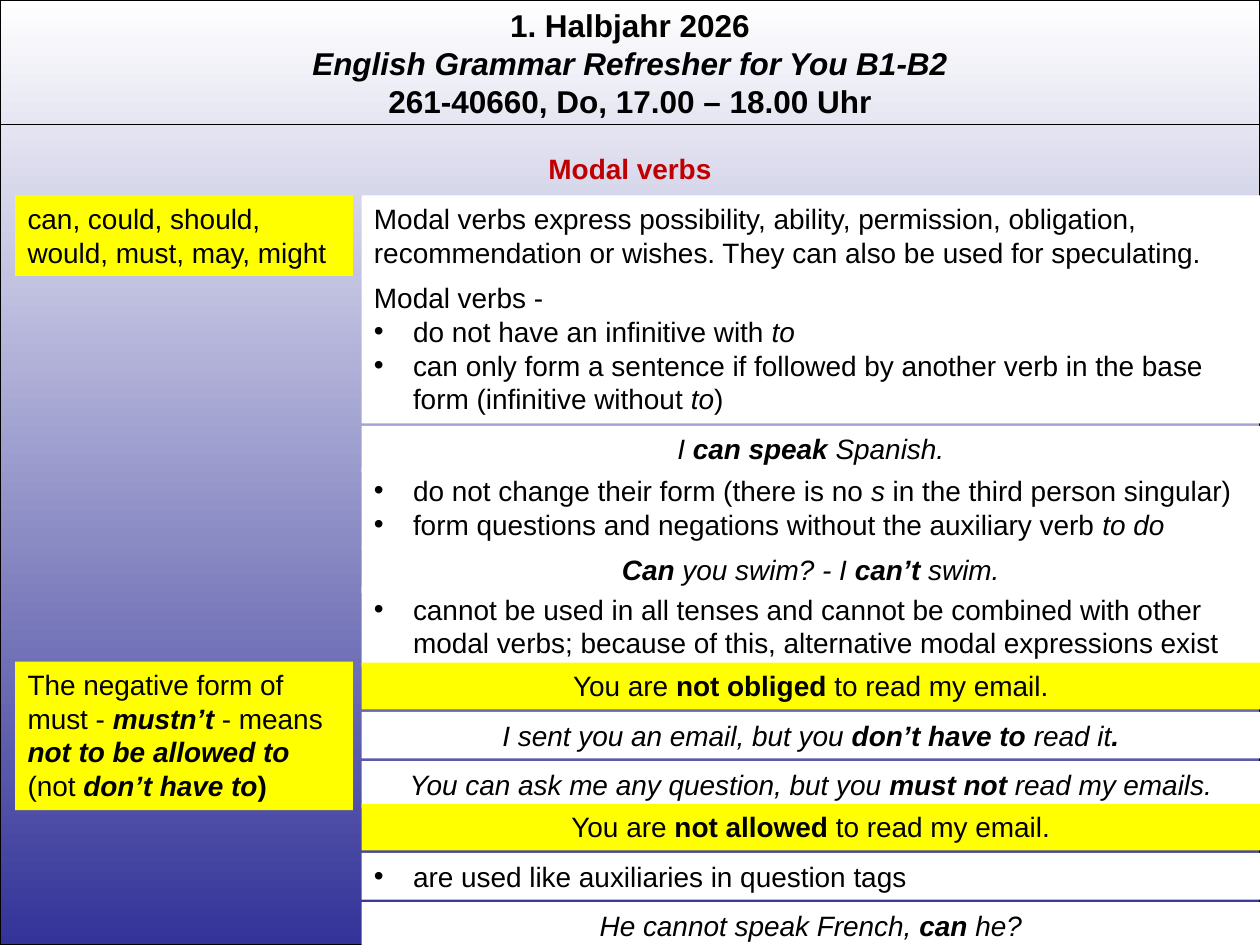
from dataclasses import dataclass

from lxml import etree
from pptx import Presentation
from pptx.dml.color import RGBColor
from pptx.enum.shapes import MSO_CONNECTOR, MSO_SHAPE
from pptx.enum.text import MSO_ANCHOR, MSO_AUTO_SIZE, PP_ALIGN
from pptx.oxml.ns import qn
from pptx.util import Inches, Pt

RECTANGLE = MSO_SHAPE.RECTANGLE
STRAIGHT = MSO_CONNECTOR.STRAIGHT
LEFT, CENTER = PP_ALIGN.LEFT, PP_ALIGN.CENTER
TOP = MSO_ANCHOR.TOP
GROW = MSO_AUTO_SIZE.SHAPE_TO_FIT_TEXT


@dataclass(frozen=True)
class Theme:
    font: str = "Arial"
    black: RGBColor = RGBColor(0, 0, 0)
    white: RGBColor = RGBColor(255, 255, 255)
    yellow: RGBColor = RGBColor(255, 255, 0)
    red: RGBColor = RGBColor(0xC0, 0, 0)
    blue: RGBColor = RGBColor(0x33, 0x33, 0x99)
    header_size: int = 18
    body_size: int = 16
    line_width: float = 0.75


THEME = Theme()

# Layout in inches
PAGE_WIDTH, PAGE_HEIGHT = 10, 7.5
HEADER_HEIGHT, RULE_TOP, TITLE_TOP = 1.01, 0.99, 1.15
LINE_HEIGHT, PADDING = 0.27, 0.1
INDENT = 0.31
SIDE = (0.12, 2.68)
MAIN = (2.87, PAGE_WIDTH - 2.87)

# Content: a paragraph is (kind, spans); a span is (text, style), b bold, i italic
HEADER = [
    ("center", [("1. Halbjahr 2026", "b")]),
    ("center", [("English Grammar Refresher for You B1-B2", "bi")]),
    ("center", [("261-40660, Do, 17.00 – 18.00 Uhr", "b")]),
]
TITLE = [("center", [("Modal verbs", "b")])]

# Blocks: column, top, number of lines, fill, paragraphs
BLOCKS = [
    (SIDE, 1.55, 2, THEME.yellow, [
        ("plain", [("can, could, should, would, must, may, might", "")])]),
    (MAIN, 1.55, 2, THEME.white, [
        ("plain", [("Modal verbs express possibility, ability, permission, obligation, "
                    "recommendation or wishes. They can also be used for speculating.", "")])]),
    (MAIN, 2.18, 4, THEME.white, [
        ("plain", [("Modal verbs -", "")]),
        ("bullet", [("do not have an infinitive with ", ""), ("to", "i")]),
        ("bullet", [("can only form a sentence if followed by another verb in the base "
                     "form (infinitive without ", ""), ("to", "i"), (")", "")])]),
    (MAIN, 3.71, 2, THEME.white, [
        ("bullet", [("do not change their form (there is no ", ""), ("s", "i"),
                    (" in the third person singular)", "")]),
        ("bullet", [("form questions and negations without the auxiliary verb ", ""),
                    ("to do", "i")])]),
    (MAIN, 3.38, 1, THEME.white, [
        ("center", [("I ", "i"), ("can speak ", "bi"), ("Spanish.", "i")])]),
    (MAIN, 4.34, 1, THEME.white, [
        ("center", [("Can ", "bi"), ("you swim? - I ", "i"), ("can’t", "bi"),
                    (" swim.", "i")])]),
    (MAIN, 4.65, 2, THEME.white, [
        ("bullet", [("cannot be used in all tenses and cannot be combined with other modal "
                     "verbs; because of this, alternative modal expressions exist", "")])]),
    (SIDE, 5.25, 4, THEME.yellow, [
        ("plain", [("The negative form of must - ", ""), ("mustn’t", "bi"),
                   (" - means ", ""), ("not to be allowed to", "bi")]),
        ("plain", [("(not ", ""), ("don’t have to", "bi"), (")", "b")])]),
    (MAIN, 5.65, 1, THEME.white, [
        ("center", [("I sent you an email, but you ", "i"), ("don’t have to ", "bi"),
                    ("read it", "i"), (".", "bi")])]),
    (MAIN, 6.04, 1, THEME.white, [
        ("center", [("You can ask me any question, but you ", "i"), ("must not ", "bi"),
                    ("read my emails.", "i")])]),
    (MAIN, 5.26, 1, THEME.yellow, [
        ("center", [("You are ", ""), ("not obliged ", "b"), ("to read my email.", "")])]),
    (MAIN, 6.38, 1, THEME.yellow, [
        ("center", [("You are ", ""), ("not allowed ", "b"), ("to read my email.", "")])]),
    (MAIN, 6.77, 1, THEME.white, [
        ("bullet", [("are used like auxiliaries in question tags", "")])]),
    (MAIN, 7.16, 1, THEME.white, [
        ("center", [("He cannot speak French,", "i"), (" can ", "bi"), ("he?", "i")])]),
]


def text_height(lines):
    return lines * LINE_HEIGHT + PADDING


def add_bullet(paragraph):
    properties = paragraph._p.get_or_add_pPr()
    properties.set("marL", str(Inches(INDENT)))
    properties.set("indent", str(-Inches(INDENT)))
    etree.SubElement(properties, qn("a:buFont")).set("typeface", THEME.font)
    etree.SubElement(properties, qn("a:buChar")).set("char", "•")


def write(box, paragraphs, size=THEME.body_size, color=THEME.black):
    frame = box.text_frame
    frame.word_wrap = True
    frame.auto_size = GROW
    frame.vertical_anchor = TOP
    for index, (kind, spans) in enumerate(paragraphs):
        paragraph = frame.add_paragraph() if index else frame.paragraphs[0]
        paragraph.alignment = CENTER if kind == "center" else LEFT
        if kind == "bullet":
            add_bullet(paragraph)
        paragraph.font.name = THEME.font
        paragraph.font.size = Pt(size)
        paragraph.font.color.rgb = color
        for text, style in spans:
            span = paragraph.add_run()
            span.text = text
            span.font.bold = "b" in style
            span.font.italic = "i" in style


def add_rectangle(page, left, top, width, height):
    box = page.shapes.add_shape(
        RECTANGLE, Inches(left), Inches(top), Inches(width), Inches(height))
    box.shadow.inherit = False
    return box


def add_backdrop(page):
    backdrop = add_rectangle(page, 0, 0, PAGE_WIDTH, PAGE_HEIGHT)
    backdrop.fill.gradient()
    backdrop.fill.gradient_angle = 270
    stops = zip(backdrop.fill.gradient_stops, (THEME.white, THEME.blue))
    for position, (stop, color) in enumerate(stops):
        stop.position = position
        stop.color.rgb = color
    backdrop.line.color.rgb = THEME.black
    backdrop.line.width = Pt(THEME.line_width)


def add_header(page):
    header = page.shapes.add_textbox(0, 0, Inches(PAGE_WIDTH), Inches(HEADER_HEIGHT))
    write(header, HEADER, THEME.header_size)
    rule = page.shapes.add_connector(
        STRAIGHT, 0, Inches(RULE_TOP), Inches(PAGE_WIDTH), Inches(RULE_TOP))
    rule.line.color.rgb = THEME.black
    rule.line.width = Pt(THEME.line_width)
    etree.SubElement(rule._element.spPr, qn("a:effectLst"))


def place_title(page):
    title = page.shapes.title
    title.left, title.top = 0, Inches(TITLE_TOP)
    title.width, title.height = Inches(PAGE_WIDTH), Inches(text_height(1))
    write(title, TITLE, color=THEME.red)
    page.shapes._spTree.append(title._element)  # in front of the backdrop


def add_block(page, column, top, lines, fill, paragraphs):
    left, width = column
    box = add_rectangle(page, left, top, width, text_height(lines))
    box.fill.solid()
    box.fill.fore_color.rgb = fill
    box.line.fill.background()
    write(box, paragraphs)


def main():
    deck = Presentation()
    deck.slide_width, deck.slide_height = Inches(PAGE_WIDTH), Inches(PAGE_HEIGHT)
    page = deck.slides.add_slide(deck.slide_layouts[5])
    add_backdrop(page)
    add_header(page)
    place_title(page)
    for block in BLOCKS:
        add_block(page, *block)
    deck.save("out.pptx")


if __name__ == "__main__":
    main()
